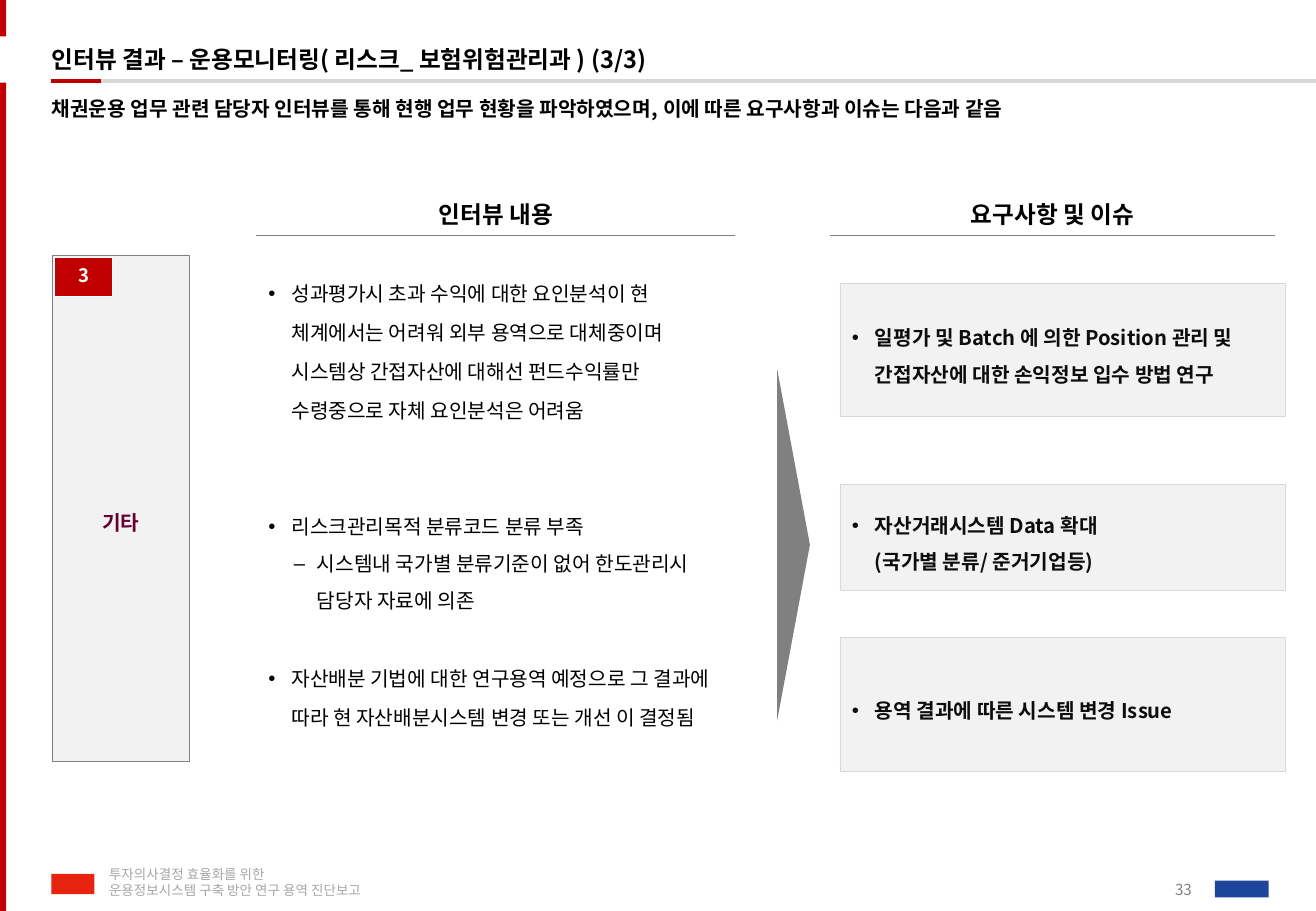
"""Builds the interview results slide on risk monitoring."""
from lxml import etree
from pptx import Presentation
from pptx.dml.color import RGBColor
from pptx.enum.shapes import MSO_CONNECTOR, MSO_SHAPE
from pptx.enum.text import MSO_ANCHOR, MSO_AUTO_SIZE, PP_ALIGN
from pptx.oxml.ns import qn
from pptx.util import Pt

RECT, TRIANGLE = MSO_SHAPE.RECTANGLE, MSO_SHAPE.ISOSCELES_TRIANGLE
STRAIGHT = MSO_CONNECTOR.STRAIGHT
LEFT, CENTER, RIGHT = PP_ALIGN.LEFT, PP_ALIGN.CENTER, PP_ALIGN.RIGHT
TOP, MIDDLE = MSO_ANCHOR.TOP, MSO_ANCHOR.MIDDLE
NO_AUTOFIT = MSO_AUTO_SIZE.NONE

FONT = "Noto Sans CJK KR"
RED, GRAY, PANEL, PANEL_EDGE = "C00000", "808080", "F2F2F2", "D9D9D9"
BULLET_INDENT = 13.7
DEFAULT_INSETS = (7.2, 3.6, 7.2, 3.6)
NO_INSETS = (0, 0, 0, 0)

INTERVIEW_NOTES = [
    ("성과평가시 초과 수익에 대한 요인분석이 현 체계에서는 어려워 외부 용역으로 대체중이며 "
     "시스템상 간접자산에 대해선 펀드수익률만 수령중으로 자체 요인분석은 어려움",
     dict(bullet="•", spacing=Pt(23))),
    ("리스크관리목적 분류코드 분류 부족",
     dict(bullet="•", spacing=Pt(23), before=46)),
    ("시스템내 국가별 분류기준이 없어 한도관리시 담당자 자료에 의존",
     dict(bullet="–", spacing=Pt(22), margin=28.8, level=1)),
    ("자산배분 기법에 대한 연구용역 예정으로 그 결과에 따라 현 자산배분시스템 변경 또는 개선 이 결정됨",
     dict(bullet="•", spacing=Pt(23), before=23)),
]
REQUIREMENTS = [
    (167.8, 79.2, "일평가 및 Batch 에 의한 Position 관리 및 간접자산에 대한 손익정보 입수 방법 연구"),
    (287.3, 62.6, "자산거래시스템 Data 확대\v(국가별 분류/ 준거기업등)"),
    (378, 79.2, "용역 결과에 따른 시스템 변경 Issue"),
]
COLUMNS = [(152, 283.7, "인터뷰 내용"), (491.8, 264.2, "요구사항 및 이슈")]


def color(hex_string):
    """Return the colour for a hex string."""
    return RGBColor.from_string(hex_string)


def set_bullet(paragraph, bullet, margin):
    """Give a paragraph a hanging bullet character."""
    properties = paragraph._p.get_or_add_pPr()
    properties.set("marL", str(Pt(margin)))
    properties.set("indent", str(-Pt(BULLET_INDENT)))
    etree.SubElement(properties, qn("a:buFont")).set("typeface", "Arial")
    etree.SubElement(properties, qn("a:buChar")).set("char", bullet)


def write(paragraph, text, size=12, bold=False, ink="000000", font=FONT, align=LEFT,
          spacing=None, before=0, bullet=None, margin=BULLET_INDENT, level=0):
    """Fill a paragraph with formatted text."""
    paragraph.text = text
    paragraph.level = level
    if bullet:
        set_bullet(paragraph, bullet, margin)
    paragraph.alignment = align
    paragraph.space_before = Pt(before)
    if spacing:
        paragraph.line_spacing = spacing
    for line_break in paragraph._p.findall(qn("a:br")):
        etree.SubElement(line_break, qn("a:rPr")).set("sz", str(size * 100))
    for run in paragraph.runs:
        run.font.name, run.font.size, run.font.bold = font, Pt(size), bold
        run.font.color.rgb = color(ink)
        east_asian = etree.SubElement(run._r.get_or_add_rPr(), qn("a:ea"))
        east_asian.set("typeface", FONT)


def set_frame(shape, insets=DEFAULT_INSETS, anchor=TOP, wrap=True):
    """Set margins, anchor and wrapping, and return the text frame."""
    frame = shape.text_frame
    frame.auto_size = NO_AUTOFIT
    frame.word_wrap = wrap
    frame.vertical_anchor = anchor
    (frame.margin_left, frame.margin_top,
     frame.margin_right, frame.margin_bottom) = map(Pt, insets)
    return frame


def add_text(slide, box, items, insets=DEFAULT_INSETS, anchor=TOP, wrap=True, **style):
    """Add a text box with one paragraph per (text, format) item."""
    frame = set_frame(slide.shapes.add_textbox(*map(Pt, box)), insets, anchor, wrap)
    for index, (text, own_style) in enumerate(items):
        paragraph = frame.add_paragraph() if index else frame.paragraphs[0]
        write(paragraph, text, **{**style, **own_style})


def add_block(slide, box, fill, edge=None, kind=RECT):
    """Add a flat filled shape with an optional hairline edge."""
    block = slide.shapes.add_shape(kind, *map(Pt, box))
    block.shadow.inherit = False
    block.fill.solid()
    block.fill.fore_color.rgb = color(fill)
    if edge:
        block.line.color.rgb = color(edge)
        block.line.width = Pt(0.25)
    else:
        block.line.fill.background()
    return block


def add_labelled_block(slide, box, fill, edge, text, insets=DEFAULT_INSETS, **style):
    """Add a block with one vertically centred paragraph."""
    block = add_block(slide, box, fill, edge)
    write(set_frame(block, insets, MIDDLE).paragraphs[0], text, **style)


def add_rule(slide, left, right, y, ink, width):
    """Add a horizontal line."""
    rule = slide.shapes.add_connector(STRAIGHT, Pt(left), Pt(y), Pt(right), Pt(y))
    rule.line.color.rgb = color(ink)
    rule.line.width = Pt(width)
    etree.SubElement(rule._element.spPr, qn("a:effectLst"))


def add_page_frame(slide):
    """Add the side bar, title rules and footer."""
    add_block(slide, (0, 49, 3.6, 491), RED)
    add_block(slide, (0, 0, 3.6, 21.6), RED)
    add_rule(slide, 30.5, 780, 48.2, "D8D8D8", 2.25)
    add_rule(slide, 30.5, 60, 48.2, RED, 2.25)
    add_block(slide, (30.5, 518, 25.5, 12), "E72410")
    add_block(slide, (720, 522, 32, 10), "1C459B")
    add_text(slide, (57.6, 510.5, 201.6, 25.2),
             [("투자의사결정 효율화를 위한", {}), ("운용정보시스템 구축 방안 연구 용역 진단보고", {})],
             anchor=MIDDLE, wrap=False, size=8, ink="A6A6A6")
    add_text(slide, (664.6, 514, 41.8, 26), [("33", {})],
             insets=NO_INSETS, anchor=MIDDLE, size=9, ink=GRAY, align=RIGHT)


def add_heading(slide):
    """Place the title and the lead sentence."""
    title = slide.shapes.title
    title.left, title.top, title.width, title.height = map(Pt, (30.7, 22.3, 431.3, 25.2))
    write(set_frame(title, NO_INSETS, MIDDLE).paragraphs[0],
          "인터뷰 결과 – 운용모니터링( 리스크_ 보험위험관리과 ) (3/3)", size=14, bold=True)
    add_text(slide, (30.7, 48.2, 725, 48.2),
             [("채권운용 업무 관련 담당자 인터뷰를 통해 현행 업무 현황을 파악하였으며, "
               "이에 따른 요구사항과 이슈는 다음과 같음", {})],
             insets=(0, 5.8, 0, 8.6), bold=True, spacing=1.2)


def main():
    """Build and save the slide."""
    presentation = Presentation()
    presentation.slide_width, presentation.slide_height = Pt(780), Pt(540)
    slide = presentation.slides.add_slide(presentation.slide_layouts[5])
    add_page_frame(slide)
    add_heading(slide)

    add_labelled_block(slide, (30.7, 151, 81.6, 300.4), PANEL, GRAY, "기타",
                       insets=(7.2, 21, 7.2, 3.6), bold=True, ink="660033",
                       font="Arial", align=CENTER)
    add_labelled_block(slide, (32.4, 152.6, 34.4, 23), RED, "FFFFFF", "3",
                       insets=(0, 5.8, 0, 5.8), size=11, bold=True, ink="FFFFFF",
                       align=CENTER, spacing=0.9)

    for left, width, heading in COLUMNS:
        add_rule(slide, left, left + width, 139.7, GRAY, 0.25)
        add_text(slide, (left, 115.2, width, 24.5), [(heading, {})],
                 size=14, bold=True, align=CENTER)

    add_text(slide, (152, 154.8, 283.7, 279.4), INTERVIEW_NOTES)
    flow_arrow = add_block(slide, (366.3, 313.2, 208.1, 19.4), GRAY, kind=TRIANGLE)
    flow_arrow.rotation = 90
    for top, height, requirement in REQUIREMENTS:
        add_labelled_block(slide, (497.8, top, 264.2, height), PANEL, PANEL_EDGE,
                           requirement, bold=True, ink="0D0D0D", spacing=1.5, bullet="•")
    presentation.save("out.pptx")


if __name__ == "__main__":
    main()
